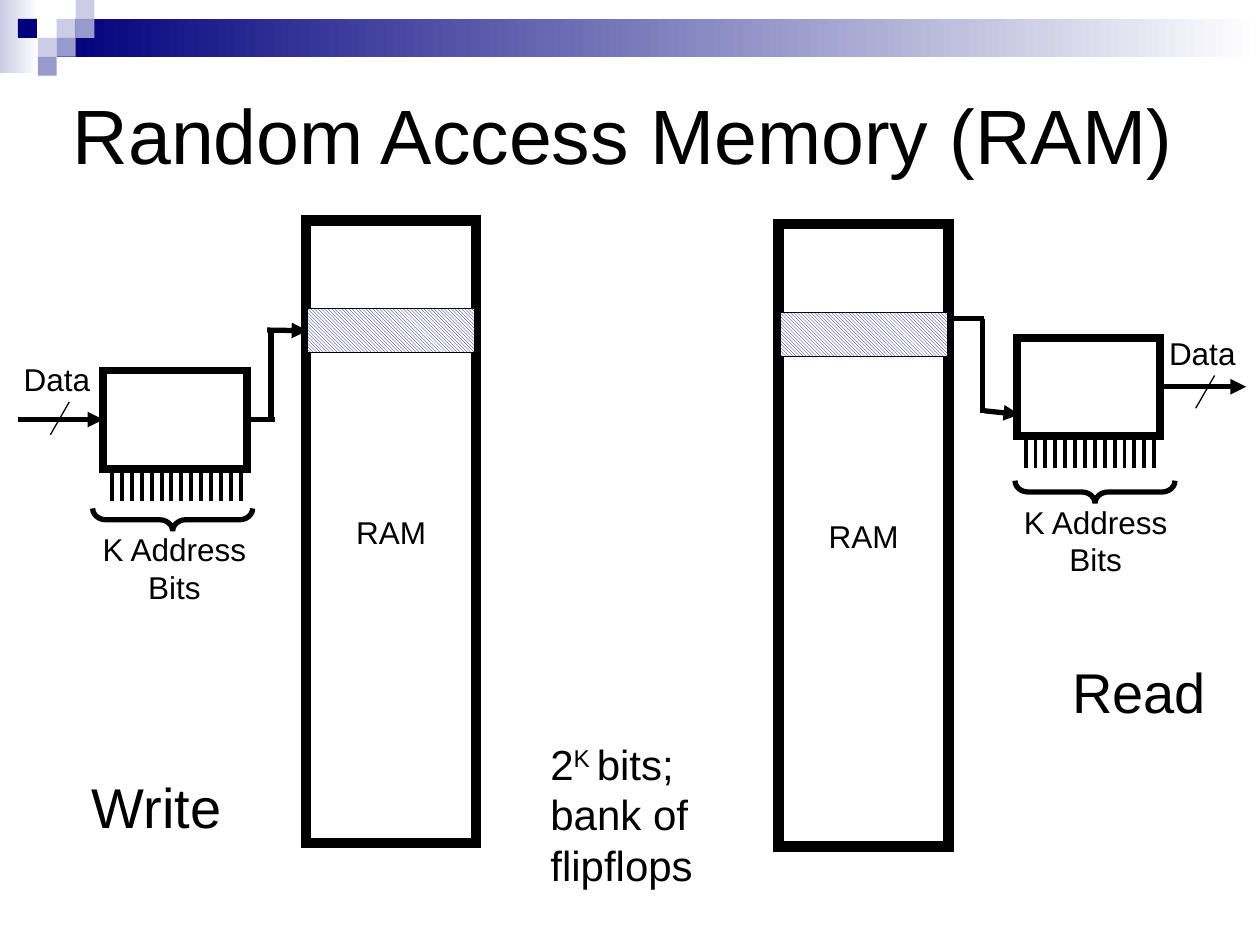
from pptx import Presentation
from pptx.dml.color import RGBColor
from pptx.enum.dml import MSO_PATTERN
from pptx.enum.shapes import MSO_CONNECTOR, MSO_SHAPE
from pptx.enum.text import MSO_ANCHOR, MSO_AUTO_SIZE, PP_ALIGN
from pptx.oxml.ns import qn
from pptx.util import Inches, Pt
from lxml import etree

RECT, BRACE = MSO_SHAPE.RECTANGLE, MSO_SHAPE.RIGHT_BRACE
STRAIGHT = MSO_CONNECTOR.STRAIGHT
HATCH = MSO_PATTERN.LIGHT_DOWNWARD_DIAGONAL
MIDDLE, FIT = MSO_ANCHOR.MIDDLE, MSO_AUTO_SIZE.SHAPE_TO_FIT_TEXT
CENTER, LEFT = PP_ALIGN.CENTER, PP_ALIGN.LEFT
LEFT_SIDE, RIGHT_SIDE = 1, 3
FONT = "Arial"
HEX = {"ink": "000000", "paper": "FFFFFF", "navy": "00007D", "mid": "9999CC", "pale": "CCCCE6"}
RGB = {name: RGBColor.from_string(value) for name, value in HEX.items()}

prs = Presentation()
prs.slide_width, prs.slide_height = Inches(10), Inches(7.5)
COL, ROW = prs.slide_width / 100, prs.slide_height / 75
s = prs.slides.add_slide(prs.slide_layouts[5])


def add_box(kind, x, y, w, h, line=None):
    sp = s.shapes.add_shape(kind, round(x * COL), round(y * ROW), round(w * COL), round(h * ROW))
    sp.shadow.inherit = False
    sp.fill.background()
    if line:
        sp.line.color.rgb = RGB["ink"]
        sp.line.width = Pt(line)
        etree.SubElement(sp.line._get_or_add_ln(), qn("a:miter"), lim="800000")
    else:
        sp.line.fill.background()
    return sp


def add_line(x1, y1, x2, y2, width=3, arrow=False):
    c = s.shapes.add_connector(STRAIGHT, round(x1 * COL), round(y1 * ROW), round(x2 * COL), round(y2 * ROW))
    c.line.color.rgb = RGB["ink"]
    c.line.width = Pt(width)
    if arrow:
        etree.SubElement(c.line._get_or_add_ln(), qn("a:tailEnd"), type="triangle")
    etree.SubElement(c._element.spPr, qn("a:effectLst"))
    return c


for x, y, w, h, start in [(0, 0, 3.1, 5.8, "pale"), (4.5, 1.5, 95.5, 3, "navy")]:
    sp = add_box(RECT, x, y, w, h)
    sp.fill.gradient()
    sp.fill.gradient_angle = 0
    for stop, position, name in zip(sp.fill.gradient_stops, (0, 1), (start, "paper")):
        stop.position = position
        stop.color.rgb = RGB[name]

TILE = 1.5
for col, row, name in [(3, 1, "pale"), (4, 0, "pale"), (4, 1, "mid"), (2, 2, "pale"),
                       (0.95, 1, "navy"), (3, 2, "mid"), (2, 3, "mid")]:
    sp = add_box(RECT, col * TILE, row * TILE, TILE, TILE)
    sp.fill.solid()
    sp.fill.fore_color.rgb = RGB[name]

title = s.shapes.title
title.left, title.top = round(3.1 * COL), round(3.1 * ROW)
title.width, title.height = round(92.7 * COL), round(15 * ROW)
tf = title.text_frame
tf.vertical_anchor = MIDDLE
p = tf.paragraphs[0]
p.alignment = CENTER
r = p.add_run()
r.text = "Random Access Memory (RAM)"
r.font.name, r.font.size = FONT, Pt(44)
r.font.color.rgb = RGB["ink"]

BANK_W, BANK_H = 13.5, 49.4
CELL_W, CELL_H = 13.3, 3.5
PORT_W, PORT_H = 11.4, 7.8
PIN_COUNT, PIN_STEP, PIN_H = 14, 0.785, 2.25
cells, ports = [], []
for bank_x, bank_y, port_x, port_y, brace_x, brace_y in [
    (24.3, 17.5, 8.2, 29.4, 12.8, 34.9),
    (61.8, 17.8, 80.7, 26.8, 86, 32.7),
]:
    bank = add_box(RECT, bank_x, bank_y, BANK_W, BANK_H, 6)
    tf = bank.text_frame
    tf.word_wrap = False
    tf.vertical_anchor = MIDDLE
    p = tf.paragraphs[0]
    p.alignment = CENTER
    r = p.add_run()
    r.text = "RAM"
    r.font.name, r.font.size = FONT, Pt(18)
    r.font.color.rgb = RGB["ink"]

    cell = add_box(RECT, bank_x + 0.1, bank_y + 7, CELL_W, CELL_H, 0.75)
    cell.fill.patterned()
    cell.fill.pattern = HATCH
    cell.fill.fore_color.rgb = RGB["navy"]
    cell.fill.back_color.rgb = RGB["paper"]
    cells.append(cell)

    ports.append(add_box(RECT, port_x, port_y, PORT_W, PORT_H, 4.5))
    for i in range(PIN_COUNT):
        pin_x = port_x + 0.7 + i * PIN_STEP
        pin_y = port_y + PORT_H + 0.3
        add_line(pin_x, pin_y, pin_x, pin_y + PIN_H, 2.25)

    brace = add_box(BRACE, brace_x, brace_y, 1.8, 12.7, 3)
    brace.rotation = 90
    brace.adjustments[0], brace.adjustments[1] = 0.58, 0.5

add_line(1.4, 33.3, 8.2, 33.3, arrow=True).end_connect(ports[0], LEFT_SIDE)
add_line(5.5, 31.9, 4, 34.5, 0.75)
add_line(19.6, 33.3, 21.8, 33.3).begin_connect(ports[0], RIGHT_SIDE)
add_line(21.5, 26, 21.5, 33.5)
add_line(21.2, 26.2, 24.4, 26.3, arrow=True).end_connect(cells[0], LEFT_SIDE)

add_line(75.6, 25.3, 78.1, 25.3)
add_line(78, 25.3, 78, 32.8)
add_line(78.1, 32.6, 80.9, 32.9, arrow=True)
add_line(92.1, 30.7, 98.9, 30.7, arrow=True).begin_connect(ports[1], RIGHT_SIDE)
add_line(96.4, 29.8, 94.9, 32.4, 0.75)

for x, y, w, h, size, align, wrap, lines in [
    (42.7, 58.1, 13.3, 13, 24, LEFT, False, [["2", "K ", "bits;"], ["bank of"], ["flipflops"]]),
    (6.6, 41.6, 14.5, 7, 18, CENTER, True, [["K Address Bits"]]),
    (79.7, 39.4, 14.5, 7, 18, CENTER, True, [["K Address Bits"]]),
    (0.9, 28.1, 7.3, 4, 18, LEFT, False, [["Data"]]),
    (91.8, 26, 7.3, 4, 18, LEFT, False, [["Data"]]),
    (6.3, 60.8, 12.4, 6.3, 32, LEFT, False, [["Write"]]),
    (84.1, 51.7, 13.2, 6.3, 32, LEFT, True, [["Read"]]),
]:
    tb = s.shapes.add_textbox(round(x * COL), round(y * ROW), round(w * COL), round(h * ROW))
    tf = tb.text_frame
    tf.word_wrap = wrap
    tf.auto_size = FIT
    p = tf.paragraphs[0]
    p.alignment = align
    for n, parts in enumerate(lines):
        if n:
            p.add_line_break()
        for part in parts:
            r = p.add_run()
            r.text = part
            r.font.name, r.font.size = FONT, Pt(size)
            r.font.color.rgb = RGB["ink"]
            if part == "K ":
                r.font._element.set("baseline", "30000")

prs.save("out.pptx")
